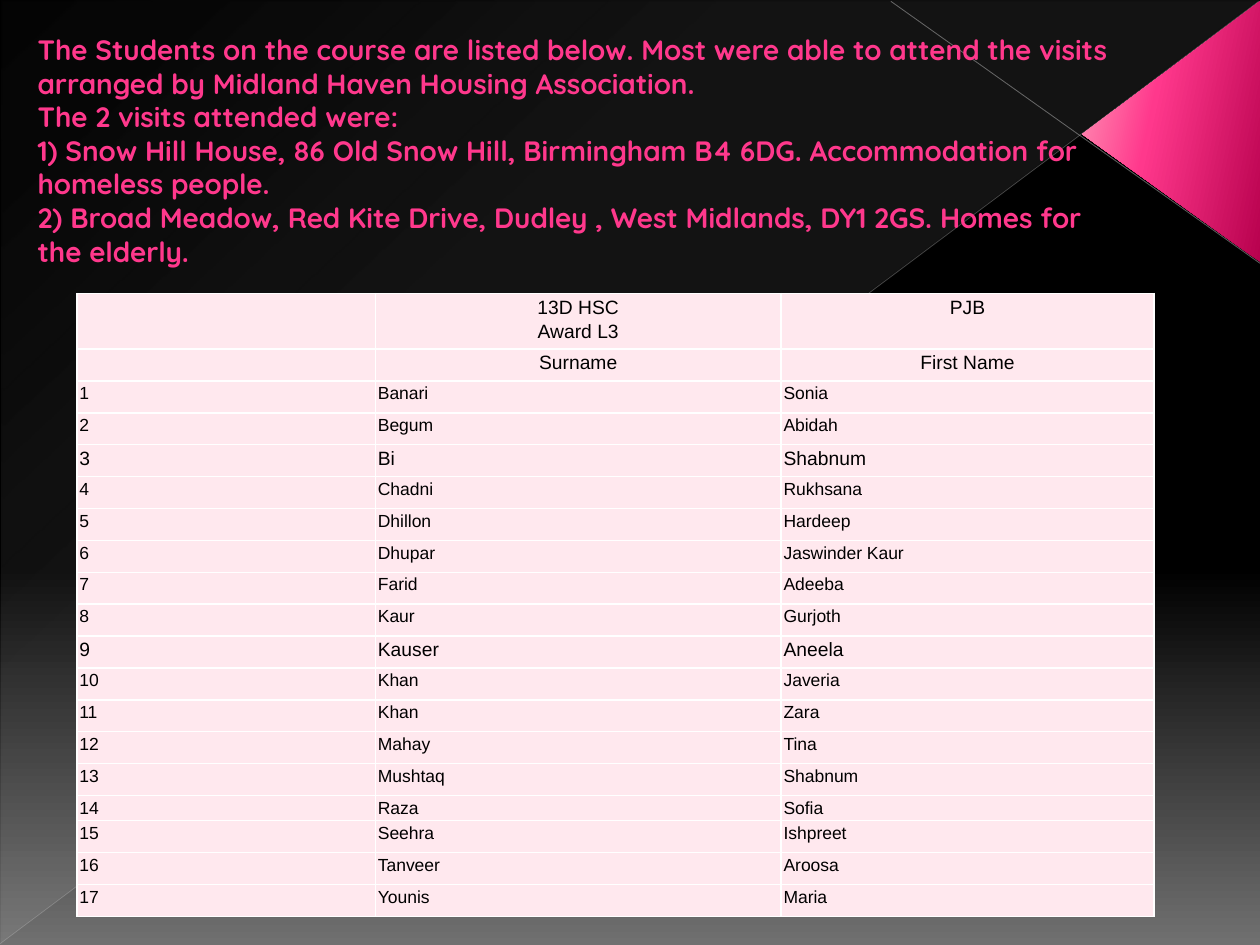
from lxml.etree import SubElement
from pptx import Presentation
from pptx.dml.color import RGBColor
from pptx.enum.shapes import MSO_CONNECTOR, MSO_SHAPE
from pptx.enum.text import MSO_AUTO_SIZE, PP_ALIGN
from pptx.oxml.ns import qn
from pptx.util import Inches, Pt

BLACK = RGBColor(0x00, 0x00, 0x00)
GREY = RGBColor(0x70, 0x70, 0x70)
MIST = RGBColor(0xD2, 0xD2, 0xD2)
SILVER = RGBColor(0xC6, 0xC6, 0xC6)
ASH = RGBColor(0xBF, 0xBF, 0xBF)
CRIMSON = RGBColor(0xB8, 0x01, 0x4E)
PINK = RGBColor(0xFF, 0x38, 0x8C)
ROSE = RGBColor(0xFF, 0x9C, 0xB9)
BLUSH = RGBColor(0xFF, 0xE8, 0xEE)
WHITE = RGBColor(0xFF, 0xFF, 0xFF)

INTRO = [
    "The Students on the course are listed below. Most were able to attend the visits "
    "arranged by Midland Haven Housing Association.",
    "The 2 visits attended were:",
    "1) Snow Hill House, 86 Old Snow Hill, Birmingham B4 6DG. Accommodation for homeless people.",
    "2) Broad Meadow, Red Kite Drive, Dudley , West Midlands, DY1 2GS. Homes for the elderly.",
]
HEADINGS = [("", "13D HSC\nAward L3", "PJB"), ("", "Surname", "First Name")]
STUDENTS = [
    ("Banari", "Sonia"), ("Begum", "Abidah"), ("Bi", "Shabnum"),
    ("Chadni", "Rukhsana"), ("Dhillon", "Hardeep"), ("Dhupar", "Jaswinder Kaur"),
    ("Farid", "Adeeba"), ("Kaur", "Gurjoth"), ("Kauser", "Aneela"),
    ("Khan", "Javeria"), ("Khan", "Zara"), ("Mahay", "Tina"),
    ("Mushtaq", "Shabnum"), ("Raza", "Sofia"), ("Seehra", "Ishpreet"),
    ("Tanveer", "Aroosa"), ("Younis", "Maria"),
]
LARGER_STUDENTS = {3, 9}
TABLE_HEIGHT, TITLE_ROW, SHORT_ROW = 4.95, 0.44, 0.2
SHORT_STUDENT = 14


def apply(target, values):
    for key, value in values.items():
        setattr(target, key, value)


class SlideBuilder:
    intro_font = {"name": "Quicksand", "size": Pt(16), "bold": True}
    cell_format = {"margin_left": Inches(0.02), "margin_right": Inches(0.02),
                   "margin_top": 0, "margin_bottom": 0}
    plain_table = {"first_row": False, "horz_banding": False}

    def __init__(self, slide):
        self.slide = slide

    def gradient(self, fill, owner, stops, angle):
        fill.gradient()
        grad = owner.find(".//" + qn("a:gradFill"))
        stop_list = grad.find(qn("a:gsLst"))
        for stop in list(stop_list):
            stop_list.remove(stop)
        for position, color, opacity in stops:
            stop = SubElement(stop_list, qn("a:gs"), pos=str(position * 1000))
            rgb = SubElement(stop, qn("a:srgbClr"), val=str(color))
            if opacity < 100:
                SubElement(rgb, qn("a:alpha"), val=str(opacity * 1000))
        grad.find(qn("a:lin")).set("ang", str(angle * 60000))

    def background(self, stops, angle):
        self.gradient(self.slide.background.fill, self.slide._element, stops, angle)

    def flipped_shape(self, preset, box, stops, angle, rotation=0, adjustment=None):
        shape = self.slide.shapes.add_shape(preset, *map(Inches, box))
        shape.shadow.inherit = False
        shape.line.fill.background()
        shape.rotation = rotation
        if adjustment is not None:
            shape.adjustments[0] = adjustment
        properties = shape._element.spPr
        properties.find(qn("a:xfrm")).set("flipV", "1")
        self.gradient(shape.fill, properties, stops, angle)

    def line(self, start, end, color, width, opacity):
        line = self.slide.shapes.add_connector(
            MSO_CONNECTOR.STRAIGHT, *map(Inches, start + end))
        line.line.color.rgb = color
        line.line.width = Pt(width)
        properties = line._element.spPr
        rgb = properties.find(".//" + qn("a:srgbClr"))
        SubElement(rgb, qn("a:alpha"), val=str(opacity * 1000))
        SubElement(properties, qn("a:effectLst"))

    def text(self, box, lines):
        frame = self.slide.shapes.add_textbox(*map(Inches, box)).text_frame
        apply(frame, {"word_wrap": True, "auto_size": MSO_AUTO_SIZE.SHAPE_TO_FIT_TEXT})
        frame.text = "\n".join(lines)
        for paragraph in frame.paragraphs:
            font = paragraph.runs[0].font
            apply(font, self.intro_font)
            font.color.rgb = PINK

    def cell(self, cell, content, size, align):
        cell.text = content
        apply(cell, self.cell_format)
        cell.fill.solid()
        cell.fill.fore_color.rgb = BLUSH
        for paragraph in cell.text_frame.paragraphs:
            apply(paragraph, {"alignment": align, "line_spacing": 1.15})
            for run in paragraph.runs:
                apply(run.font, {"name": "Arial", "size": Pt(size)})
                run.font.color.rgb = BLACK
            if not paragraph.runs:
                SubElement(paragraph._p, qn("a:endParaRPr"), sz=str(size * 100))
        properties = cell._tc.get_or_add_tcPr()
        for index, side in enumerate(("lnL", "lnR", "lnT", "lnB")):
            border = SubElement(properties, qn("a:" + side), w=str(Pt(1)))
            solid = SubElement(border, qn("a:solidFill"))
            SubElement(solid, qn("a:srgbClr"), val=str(WHITE))
            properties.insert(index, border)

    def table(self, box, widths, heights, rows):
        table = self.slide.shapes.add_table(
            len(rows), len(widths), *map(Inches, box)).table
        apply(table, self.plain_table)
        for column, width in zip(table.columns, widths):
            column.width = Inches(width)
        for row, height, (contents, size, align) in zip(table.rows, heights, rows):
            row.height = Inches(height)
            for cell, content in zip(row.cells, contents):
                self.cell(cell, content, size, align)


def main():
    deck = Presentation()
    apply(deck, {"slide_width": Inches(10), "slide_height": Inches(7.5)})
    builder = SlideBuilder(deck.slides.add_slide(deck.slide_layouts[6]))

    builder.background([(0, BLACK, 100), (60, BLACK, 100), (100, GREY, 100)], 90)
    builder.flipped_shape(MSO_SHAPE.RIGHT_TRIANGLE, (0.01, 0.01, 9.99, 7.48),
                          [(0, MIST, 10), (70, MIST, 8), (100, MIST, 1)], 133)
    builder.flipped_shape(MSO_SHAPE.ISOSCELES_TRIANGLE, (8.26, 0.34, 2.07, 1.41),
                          [(0, CRIMSON, 100), (60, PINK, 100), (100, ROSE, 100)], 258,
                          rotation=90, adjustment=0.51)
    builder.line((10, 2.09), (7.07, 0.01), SILVER, 0.47, 45)
    builder.line((0, 7.49), (9.99, 0.01), ASH, 0.39, 35)

    rows = [(heading, 11, PP_ALIGN.CENTER) for heading in HEADINGS]
    for number, student in enumerate(STUDENTS, 1):
        size = 11 if number in LARGER_STUDENTS else 10
        rows.append(((str(number), *student), size, PP_ALIGN.LEFT))
    regular_row = (TABLE_HEIGHT - TITLE_ROW - SHORT_ROW) / (len(rows) - 2)
    heights = [regular_row] * len(rows)
    heights[0] = TITLE_ROW
    heights[len(HEADINGS) + SHORT_STUDENT - 1] = SHORT_ROW
    builder.table((0.61, 2.33, 8.54, TABLE_HEIGHT), (2.37, 3.22, 2.96), heights, rows)

    builder.text((0.2, 0.21, 8.74, 3.11), INTRO)
    deck.save("out.pptx")


if __name__ == "__main__":
    main()
